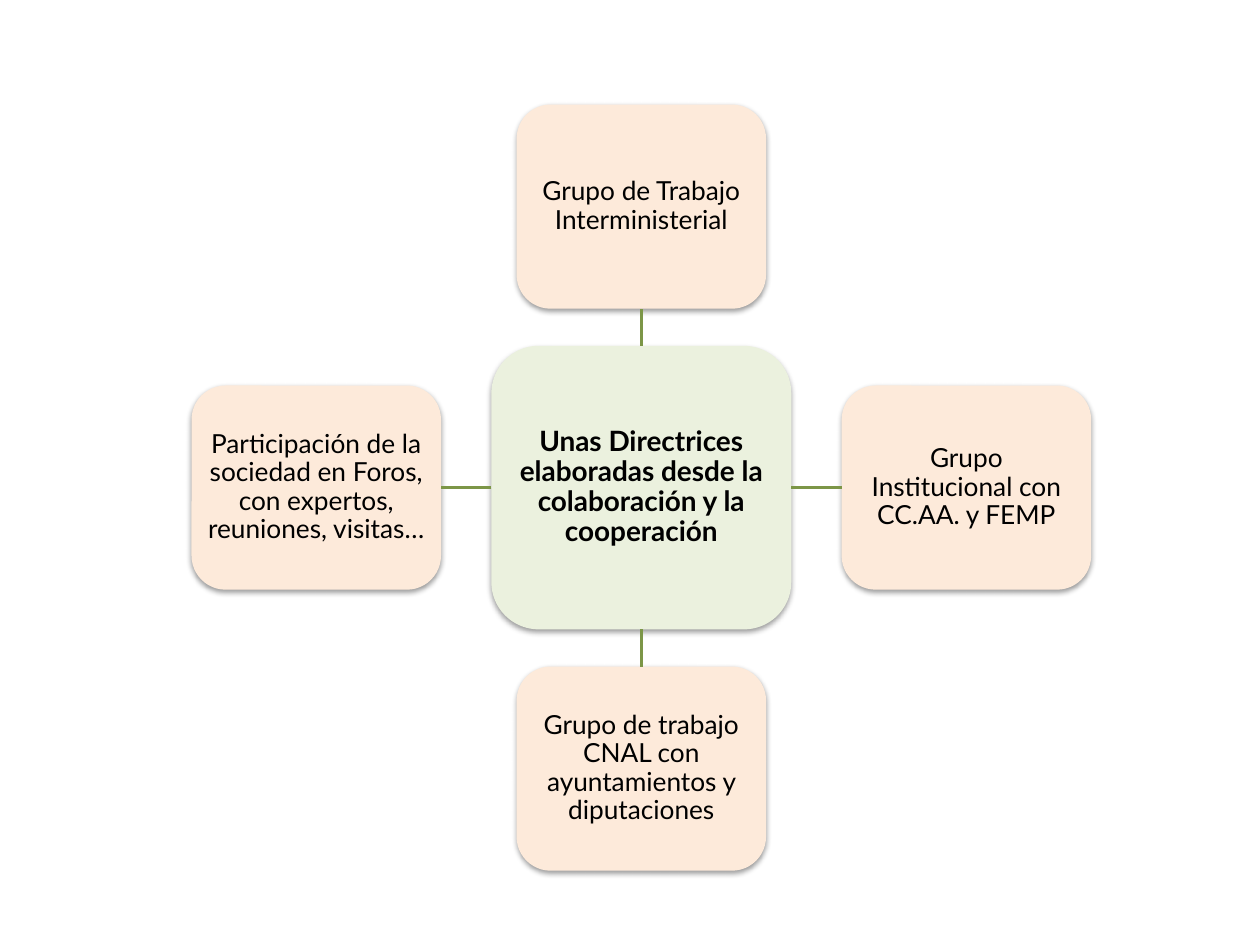
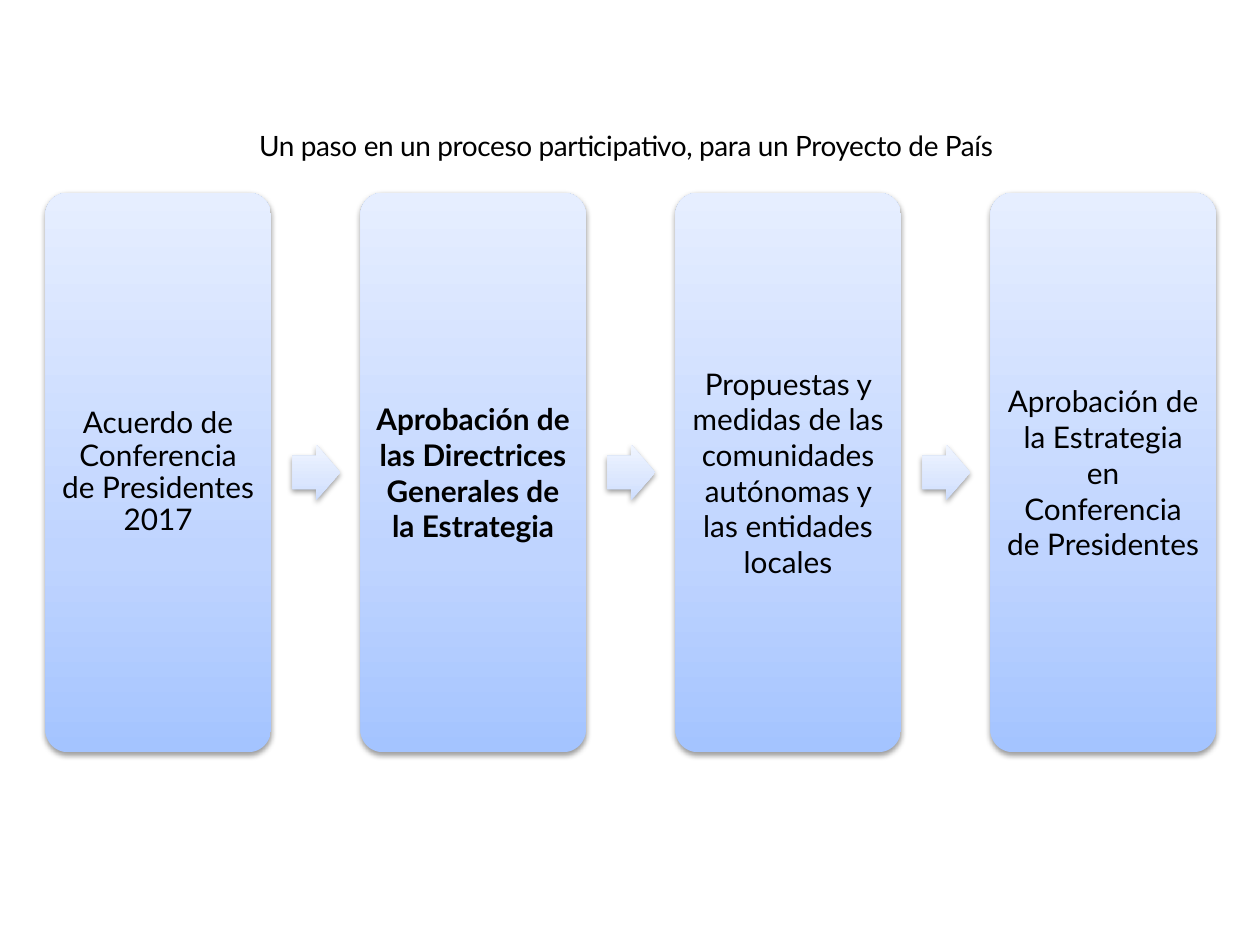
"""Build two slides: the groups behind the guidelines and the steps of the process."""
from dataclasses import dataclass

from lxml import etree
from pptx import Presentation
from pptx.dml.color import RGBColor
from pptx.enum.shapes import MSO_CONNECTOR, MSO_SHAPE
from pptx.enum.text import MSO_ANCHOR, MSO_AUTO_SIZE, PP_ALIGN
from pptx.oxml.ns import qn
from pptx.util import Inches, Pt

ROUNDED = MSO_SHAPE.ROUNDED_RECTANGLE
ARROW = MSO_SHAPE.RIGHT_ARROW
STRAIGHT = MSO_CONNECTOR.STRAIGHT
CENTER = PP_ALIGN.CENTER
MIDDLE = MSO_ANCHOR.MIDDLE
NO_FIT = MSO_AUTO_SIZE.NONE
TOP, LEFT, BOTTOM, RIGHT = range(4)
TITLE_ONLY, BLANK = 5, 6

FONT = "Lato"
BLACK = "000000"
CORE_FILL = "EBF1DE"
GROUP_FILL = "FDEADA"
LINK = "7C9647"
STEP_STOPS = ((0, "A4C4FF"), (35, "BFD4FF"), (100, "E6EEFF"))
ARROW_STOPS = ((0, "CDDDFE"), (35, "DBE6FE"), (100, "F0F5FF"))

CORE_X, CORE_Y = 5.09, 3.87
CORE_WIDTH, CORE_HEIGHT = 2.38, 2.25
GROUP_WIDTH, GROUP_HEIGHT = 1.98, 1.62
REACH_X, REACH_Y = 2.58, 2.23

STEP_LEFT, STEP_TOP, STEP_PITCH = 0.36, 1.53, 2.5
STEP_WIDTH, STEP_HEIGHT = 1.79, 4.44
ARROW_WIDTH, ARROW_HEIGHT = 0.38, 0.44
ARROW_OFFSET = 1.96


@dataclass
class Label:
    """Wording of a box and how it is set."""
    text: str
    size: float
    bold: bool = False
    spacing: float = 0.9
    inset: float = 0.04


@dataclass
class Group:
    """A group around the core, with its direction and the joined sides."""
    text: str
    across: int
    down: int
    core_side: int
    own_side: int


GROUPS = (
    Group("Grupo de Trabajo Interministerial", 0, -1, TOP, BOTTOM),
    Group("Grupo Institucional con CC.AA. y FEMP", 1, 0, RIGHT, LEFT),
    Group("Grupo de trabajo CNAL con ayuntamientos y diputaciones", 0, 1, BOTTOM, TOP),
    Group("Participación de la sociedad en Foros, con expertos, reuniones, visitas…",
          -1, 0, LEFT, RIGHT),
)
STEPS = (
    Label("Acuerdo de Conferencia de Presidentes 2017", 17, inset=0.07),
    Label("Aprobación de las Directrices Generales de la Estrategia", 17, True, 1, 0.07),
    Label("Propuestas y medidas de las comunidades autónomas y las entidades locales",
          17, False, 1, 0.07),
    Label("Aprobación de la Estrategia en Conferencia de Presidentes", 17, False, 1, 0.07),
)


def color(code: str) -> RGBColor:
    """Turn a hex string into a colour."""
    return RGBColor.from_string(code)


def apply(target, **values) -> None:
    """Set attributes from a dict of format values."""
    for name, value in values.items():
        setattr(target, name, value)


def add_color(parent, code: str):
    """Append a colour element to an XML parent."""
    return etree.SubElement(parent, qn("a:srgbClr"), val=code)


def add_shadow(shape) -> None:
    """Give a shape the soft shadow that all boxes share."""
    shape.shadow.inherit = False
    effects = shape._element.spPr.find(qn("a:effectLst"))
    shadow = etree.SubElement(effects, qn("a:outerShdw"), blurRad="40000", dist="20000",
                              dir="5400000", rotWithShape="0")
    etree.SubElement(add_color(shadow, BLACK), qn("a:alpha"), val="38000")


def fill_gradient(shape, stops: tuple) -> None:
    """Fill a shape with colour stops running from bottom to top."""
    shape.fill.gradient()
    shape.fill.gradient_angle = 90
    stop_list = shape._element.spPr.find(".//" + qn("a:gsLst"))
    for stop in list(stop_list):
        stop_list.remove(stop)
    for percent, code in stops:
        add_color(etree.SubElement(stop_list, qn("a:gs"), pos=str(percent * 1000)), code)


def write(frame, label: Label) -> None:
    """Write a centred label into a text frame."""
    inset = Inches(label.inset)
    apply(frame, text=label.text, word_wrap=True, auto_size=NO_FIT, vertical_anchor=MIDDLE,
          margin_left=inset, margin_right=inset, margin_top=inset, margin_bottom=inset)
    para = frame.paragraphs[0]
    apply(para, alignment=CENTER, line_spacing=label.spacing,
          space_after=Pt(label.size * 0.35))
    font = para.runs[0].font
    apply(font, name=FONT, size=Pt(label.size), bold=label.bold)
    font.color.rgb = color(BLACK)


def add_block(page, kind, left: float, top: float, width: float, height: float,
              fill: str | tuple, adjustments: tuple = ()):
    """Add a shadowed shape without outline, in one colour or a gradient."""
    shape = page.shapes.add_shape(kind, Inches(left), Inches(top), Inches(width), Inches(height))
    for index, value in enumerate(adjustments):
        shape.adjustments[index] = value
    if isinstance(fill, str):
        shape.fill.solid()
        shape.fill.fore_color.rgb = color(fill)
    else:
        fill_gradient(shape, fill)
    shape.line.fill.background()
    add_shadow(shape)
    return shape


def add_centered_box(page, x: float, y: float, width: float, height: float,
                     fill: str, label: Label):
    """Add a labelled rounded box around a centre point."""
    box = add_block(page, ROUNDED, x - width / 2, y - height / 2, width, height, fill)
    write(box.text_frame, label)
    return box


def add_link(page, core, core_side: int, box, own_side: int) -> None:
    """Join the core to a box with a straight line."""
    link = page.shapes.add_connector(STRAIGHT, 0, 0, 0, 0)
    link.begin_connect(core, core_side)
    link.end_connect(box, own_side)
    link.line.color.rgb = color(LINK)
    link.line.width = Pt(2)
    etree.SubElement(link._element.spPr, qn("a:effectLst"))


def build_groups(deck) -> None:
    """Draw the core and the four groups that surround it."""
    page = deck.slides.add_slide(deck.slide_layouts[BLANK])
    core = add_centered_box(
        page, CORE_X, CORE_Y, CORE_WIDTH, CORE_HEIGHT, CORE_FILL,
        Label("Unas Directrices elaboradas desde la colaboración y la cooperación", 16, True))
    for group in GROUPS:
        box = add_centered_box(page, CORE_X + group.across * REACH_X,
                               CORE_Y + group.down * REACH_Y, GROUP_WIDTH, GROUP_HEIGHT,
                               GROUP_FILL, Label(group.text, 15))
        add_link(page, core, group.core_side, box, group.own_side)


def build_process(deck) -> None:
    """Draw the heading and the four steps with arrows between them."""
    page = deck.slides.add_slide(deck.slide_layouts[TITLE_ONLY])
    title = page.shapes.title
    apply(title, left=Inches(-0.03), top=Inches(0.97), width=Inches(10), height=Inches(0.37))
    write(title.text_frame, Label("Un paso en un proceso participativo, para un Proyecto de País",
                                  16, spacing=1, inset=0.05))
    title.text_frame.paragraphs[0].space_after = Pt(0)
    title.text_frame.paragraphs[0].runs[0].font._element.set("spc", "-20")
    for index, step in enumerate(STEPS):
        left = STEP_LEFT + index * STEP_PITCH
        box = add_block(page, ROUNDED, left, STEP_TOP, STEP_WIDTH, STEP_HEIGHT,
                        STEP_STOPS, (0.1,))
        write(box.text_frame, step)
        if index < len(STEPS) - 1:
            add_block(page, ARROW, left + ARROW_OFFSET,
                      STEP_TOP + (STEP_HEIGHT - ARROW_HEIGHT) / 2,
                      ARROW_WIDTH, ARROW_HEIGHT, ARROW_STOPS, (0.6, 0.5))


def main() -> None:
    """Build the deck and save it."""
    deck = Presentation()
    apply(deck, slide_width=Inches(10), slide_height=Inches(7.5))
    build_groups(deck)
    build_process(deck)
    deck.save("out.pptx")


if __name__ == "__main__":
    main()
